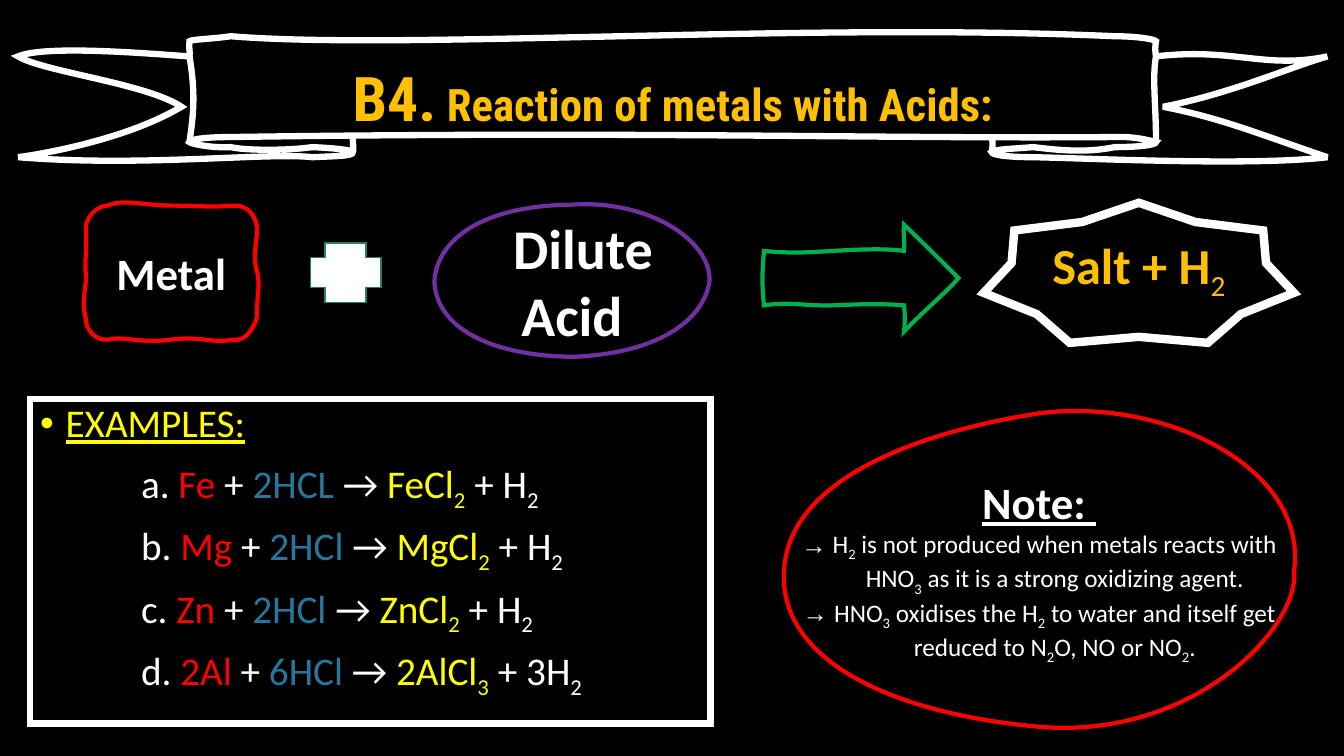
from dataclasses import dataclass

from lxml.etree import SubElement
from pptx import Presentation
from pptx.dml.color import RGBColor
from pptx.enum.shapes import MSO_SHAPE as Preset
from pptx.enum.text import MSO_ANCHOR as Anchor, MSO_AUTO_SIZE as AutoSize, PP_ALIGN as Align
from pptx.oxml.ns import qn
from pptx.util import Cm, Pt

WHITE, BLACK, RED, YELLOW, GOLD = "FFFFFF", "000000", "FF0000", "FFFF00", "FFC000"
BLUE, PURPLE, GREEN, TEAL = "29769D", "7030A0", "00B050", "1E8168"
GRID = Cm(0.0254)


@dataclass
class Contour:
    start: tuple[int, int]
    curves: list[tuple[int, int, int, int, int, int]]
    closed: bool = True


@dataclass
class Sketch:
    contours: list[Contour]
    color: str
    width: float = 3


@dataclass
class Reaction:
    letter: str
    metal: str
    acid: str
    salt: str
    gas: str


BANNER = Sketch([
    Contour((18, 156), [
        (48, 152, 128, 137, 180, 106), (146, 83, 42, 71, 18, 56), (46, 44, 156, 54, 188, 56),
        (189, 52, 187, 48, 188, 41), (190, 39, 208, 39, 229, 36), (399, 50, 798, 22, 1106, 36),
        (1128, 36, 1146, 39, 1147, 41), (1146, 45, 1146, 52, 1147, 56),
        (1224, 47, 1255, 69, 1317, 56), (1279, 67, 1221, 93, 1154, 106),
        (1211, 117, 1249, 133, 1317, 156), (1244, 165, 1077, 157, 1025, 156),
        (1002, 156, 984, 154, 984, 151), (987, 148, 1002, 148, 1025, 146),
        (1050, 149, 1077, 152, 1106, 146), (1129, 146, 1147, 144, 1147, 141),
        (1146, 141, 1128, 135, 1106, 136), (878, 138, 636, 130, 229, 136),
        (206, 136, 188, 138, 188, 141), (188, 142, 206, 147, 229, 146),
        (241, 149, 281, 150, 310, 146), (332, 147, 350, 149, 350, 151),
        (351, 155, 332, 155, 310, 156), (266, 151, 140, 166, 18, 156),
    ]),
    Contour((350, 136), [(350, 141, 351, 147, 350, 151)], False),
    Contour((984, 151), [(985, 148, 985, 138, 984, 136)], False),
    Contour((188, 141), [(191, 119, 195, 97, 188, 56)], False),
    Contour((1147, 56), [(1143, 77, 1147, 104, 1147, 141)], False),
], WHITE, 4.5)

METAL = Sketch([Contour((85, 226), [
    (86, 215, 96, 204, 107, 204), (121, 197, 145, 204, 170, 204), (195, 204, 209, 206, 232, 204),
    (245, 203, 254, 214, 255, 226), (256, 235, 250, 254, 255, 269), (259, 284, 254, 298, 255, 315),
    (252, 324, 245, 339, 232, 337), (208, 341, 200, 333, 169, 337), (138, 341, 123, 333, 107, 337),
    (95, 338, 85, 328, 85, 315), (80, 296, 87, 283, 85, 270), (84, 256, 87, 243, 85, 226),
])], RED)

ACID = Sketch([Contour((431, 279), [
    (434, 237, 479, 204, 568, 203), (644, 198, 706, 239, 704, 279),
    (698, 319, 651, 351, 568, 354), (488, 353, 433, 326, 431, 279),
])], PURPLE)

ARROW = Sketch([Contour((758, 249), [
    (788, 252, 807, 250, 826, 249), (845, 248, 877, 246, 897, 249), (898, 242, 896, 230, 897, 223),
    (920, 245, 927, 252, 951, 276), (935, 294, 920, 305, 897, 329), (898, 320, 898, 312, 897, 303),
    (873, 301, 852, 302, 827, 303), (802, 304, 783, 299, 758, 303), (756, 281, 756, 275, 758, 249),
])], GREEN)

NOTE = Sketch([Contour((778, 566), [
    (782, 481, 897, 431, 1031, 410), (1157, 394, 1298, 465, 1284, 566),
    (1290, 623, 1183, 734, 1031, 721), (883, 708, 772, 654, 778, 566),
])], RED)

REACTIONS = [
    Reaction("a", "Fe", "2HCL", "FeCl_2", "H_2"),
    Reaction("b", "Mg", "2HCl", "MgCl_2", "H_2"),
    Reaction("c", "Zn", "2HCl", "ZnCl_2", "H_2"),
    Reaction("d", "2Al", "6HCl", "2AlCl_3", "3H_2"),
]

NOTES = [
    "H_2 is not produced when metals reacts with HNO_3 as it is a strong oxidizing agent.",
    "HNO_3 oxidises the H_2 to water and itself get reduced to N_2O, NO or NO_2.",
]


def rgb(value: str) -> RGBColor:
    return RGBColor.from_string(value)


def set_outline(shape, color: str, width: float, fill: str | None = None) -> None:
    shape.line.color.rgb = rgb(color)
    shape.line.width = Pt(width)
    SubElement(shape._element.spPr.find(qn("a:ln")), qn("a:miter"), lim="800000")
    if fill:
        shape.fill.solid()
        shape.fill.fore_color.rgb = rgb(fill)
    else:
        shape.fill.background()


def bend_segments(shape, sketch: Sketch) -> None:
    curves = [curve for contour in sketch.contours for curve in contour.curves]
    segments = list(shape._element.iter(qn("a:lnTo")))
    for segment, curve in zip(segments, curves):
        bezier = SubElement(segment.getparent(), qn("a:cubicBezTo"))
        for x, y in zip(curve[::2], curve[1::2]):
            SubElement(bezier, qn("a:pt"), x=str(x * GRID - shape.left), y=str(y * GRID - shape.top))
        segment.getparent().replace(segment, bezier)


def draw_sketch(slide, sketch: Sketch):
    first_x, first_y = sketch.contours[0].start
    builder = slide.shapes.build_freeform(first_x * GRID, first_y * GRID)
    for index, contour in enumerate(sketch.contours):
        if index:
            builder.move_to(contour.start[0] * GRID, contour.start[1] * GRID)
        ends = [(curve[4] * GRID, curve[5] * GRID) for curve in contour.curves]
        builder.add_line_segments(ends, close=contour.closed)
    shape = builder.convert_to_shape()
    bend_segments(shape, sketch)
    shape.shadow.inherit = False
    set_outline(shape, sketch.color, sketch.width)
    shape.text_frame.word_wrap = True
    shape.text_frame.vertical_anchor = Anchor.MIDDLE
    return shape


def draw_preset(slide, preset, left: float, top: float, width: float, height: float):
    shape = slide.shapes.add_shape(preset, Cm(left), Cm(top), Cm(width), Cm(height))
    shape.shadow.inherit = False
    return shape


def place(shape, left: float, top: float, width: float, height: float) -> None:
    shape.left, shape.top, shape.width, shape.height = Cm(left), Cm(top), Cm(width), Cm(height)
    shape.text_frame.auto_size = AutoSize.NONE
    shape.text_frame.word_wrap = True


def write(paragraph, text: str, *, size: float, color: str = WHITE, bold: bool = False,
          underline: bool = False, font: str = "Calibri") -> None:
    first, *rest = text.split("_")
    pieces = [(first, False)]
    for part in rest:
        pieces += [(part[:1], True), (part[1:], False)]
    for piece, subscript in pieces:
        if not piece:
            continue
        run = paragraph.add_run()
        run.text = piece
        run.font.name, run.font.size, run.font.underline = font, Pt(size), underline
        run.font.bold = bold and not subscript
        run.font.color.rgb = rgb(color)
        if subscript:
            run.font._element.set("baseline", "-25000")


def set_bullet(paragraph, bullet: str | None, margin: float, first_line: float = 0) -> None:
    properties = paragraph._p.get_or_add_pPr()
    properties.set("marL", str(Cm(margin)))
    properties.set("indent", str(Cm(first_line)))
    if bullet:
        SubElement(properties, qn("a:buFont"), typeface="Arial")
        SubElement(properties, qn("a:buChar"), char=bullet)
    else:
        SubElement(properties, qn("a:buNone"))


def write_label(shape, text: str, **text_format) -> None:
    paragraph = shape.text_frame.paragraphs[0]
    paragraph.alignment = Align.CENTER
    write(paragraph, text, **text_format)


def fill_examples(body) -> None:
    place(body, 0.76, 10.05, 17.15, 8.18)
    set_outline(body, WHITE, 4.5)
    heading = body.text_frame.paragraphs[0]
    heading.space_before, heading.line_spacing = Pt(0), 0.9
    set_bullet(heading, "•", 0.64, -0.64)
    write(heading, "EXAMPLES:", size=28, color=YELLOW, underline=True)
    for reaction in REACTIONS:
        paragraph = body.text_frame.add_paragraph()
        paragraph.space_before, paragraph.line_spacing = Pt(10), 0.9
        set_bullet(paragraph, None, 2.54)
        for text, color in (
            (f"{reaction.letter}. ", WHITE), (reaction.metal, RED), (" + ", WHITE),
            (f"{reaction.acid} ", BLUE), ("→ ", WHITE), (reaction.salt, YELLOW),
            (f" + {reaction.gas}", WHITE),
        ):
            write(paragraph, text, size=28, color=color)


def main() -> None:
    presentation = Presentation()
    presentation.slide_width, presentation.slide_height = Cm(33.87), Cm(19.05)
    slide = presentation.slides.add_slide(presentation.slide_layouts[1])
    slide.background.fill.solid()
    slide.background.fill.fore_color.rgb = rgb(BLACK)

    fill_examples(slide.placeholders[1])
    draw_sketch(slide, BANNER)
    title = slide.shapes.title
    place(title, 4.78, 1.18, 24.36, 2.54)
    title.text_frame.vertical_anchor = Anchor.MIDDLE
    for text, size in (("B4.", 44), (" Reaction of metals with Acids:", 32)):
        write_label(title, text, size=size, color=GOLD, bold=True, font="Roboto Condensed")

    write_label(draw_sketch(slide, METAL), "Metal", size=32, bold=True)
    plus = draw_preset(slide, Preset.CROSS, 7.82, 6.12, 1.78, 1.5)
    set_outline(plus, TEAL, 1, WHITE)
    acid = draw_sketch(slide, ACID)
    acid.text_frame.margin_left = acid.text_frame.margin_right = Cm(0.8)
    set_bullet(acid.text_frame.paragraphs[0], None, 0, 0.56)
    write_label(acid, "Dilute Acid", size=40, bold=True)
    draw_sketch(slide, ARROW)

    product = draw_preset(slide, Preset.STAR_7_POINT, 24.79, 5.11, 7.82, 3.53)
    product.adjustments[0] = 0.41
    set_outline(product, WHITE, 6)
    write_label(product, "Salt + H_2", size=36, color=GOLD, bold=True)

    note = draw_sketch(slide, NOTE)
    write_label(note, "Note: ", size=32, bold=True, underline=True)
    for text in NOTES:
        paragraph = note.text_frame.add_paragraph()
        paragraph.alignment = Align.CENTER
        set_bullet(paragraph, "→", 0.79, -0.79)
        write(paragraph, text, size=18)

    presentation.save("out.pptx")


if __name__ == "__main__":
    main()
